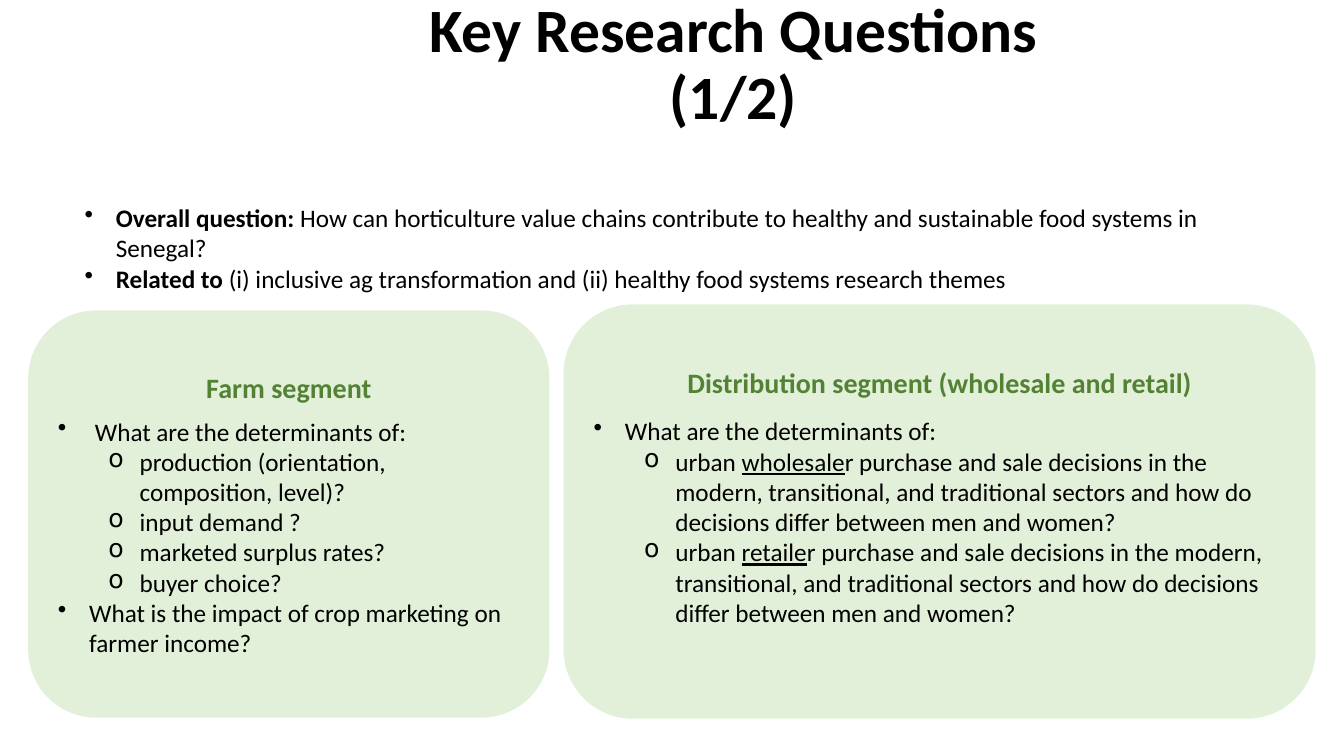
import pptx
import pptx.util
import pptx.dml.color
import pptx.enum.shapes
import pptx.enum.text
import pptx.oxml.ns
import lxml.etree

Inches = pptx.util.Inches
Pt = pptx.util.Pt
ALIGN = pptx.enum.text.PP_ALIGN
ANCHOR = pptx.enum.text.MSO_ANCHOR

FONT = "Calibri"
BLACK = "000000"
DARK_GREEN = "548235"
PALE_GREEN = "E2F0D9"
BULLETS = ("•", "o")

DECISIONS = (
    "r purchase and sale decisions in the modern, transitional, and traditional "
    "sectors and how do decisions differ between men and women?"
)

# Each item is a level and its runs; a run is its text and an optional emphasis.
OVERVIEW = [
    (0, [("Overall question: ", "bold"),
         ("How can horticulture value chains contribute to healthy and "
          "sustainable food systems in Senegal?", None)]),
    (0, [("Related to ", "bold"),
         ("(i) inclusive ag transformation and (ii) healthy food systems "
          "research themes", None)]),
]
FARM = [
    (0, [(" What are the determinants of:", None)]),
    (1, [("production (orientation, composition, level)?", None)]),
    (1, [("input demand ?", None)]),
    (1, [("marketed surplus rates?", None)]),
    (1, [("buyer choice?", None)]),
    (0, [("What is the impact of crop marketing on farmer income?", None)]),
]
DISTRIBUTION = [(0, [("What are the determinants of:", None)])] + [
    (1, [("urban ", None), (trader, "underline"), (DECISIONS, None)])
    for trader in ("wholesale", "retaile")
]


def color(hex_string):
    return pptx.dml.color.RGBColor.from_string(hex_string)


def style(paragraph, size, hex_color, alignment, bold=None):
    paragraph.alignment = alignment
    paragraph.font.name = FONT
    paragraph.font.size = Pt(size)
    paragraph.font.color.rgb = color(hex_color)
    paragraph.font.bold = bold


def set_bullet(paragraph, level):
    """Give the paragraph the hanging indent and bullet of its level."""
    paragraph.level = level
    properties = paragraph._p.get_or_add_pPr()
    properties.set("marL", str(Inches(0.31 + 0.5 * level)))
    properties.set("indent", str(Inches(-0.31)))
    bullet = lxml.etree.Element(pptx.oxml.ns.qn("a:buChar"), char=BULLETS[level])
    # Bullets come before the default run properties.
    properties.find(pptx.oxml.ns.qn("a:defRPr")).addprevious(bullet)


def add_bullets(text_frame, items):
    for level, runs in items:
        first_is_free = not text_frame.paragraphs[0].runs
        paragraph = text_frame.paragraphs[0] if first_is_free else text_frame.add_paragraph()
        style(paragraph, 18, BLACK, ALIGN.LEFT)
        set_bullet(paragraph, level)
        for text, emphasis in runs:
            run = paragraph.add_run()
            run.text = text
            if emphasis == "bold":
                run.font.bold = True
            elif emphasis == "underline":
                run.font.underline = True


def add_text_box(slide, left, top, width, height):
    box = slide.shapes.add_textbox(
        Inches(left), Inches(top), Inches(width), Inches(height))
    box.text_frame.word_wrap = True
    return box.text_frame


def add_title(slide, text):
    text_frame = add_text_box(slide, 3.54, 0.23, 7.47, 0.85)
    text_frame.vertical_anchor = ANCHOR.MIDDLE
    paragraph = text_frame.paragraphs[0]
    paragraph.text = text
    paragraph.line_spacing = 0.9
    style(paragraph, 44, BLACK, ALIGN.CENTER, bold=True)


def add_segment(slide, place, heading, heading_gap, items, bottom_margin=0.05):
    """Add a rounded panel with a green heading above its questions."""
    panel = slide.shapes.add_shape(
        pptx.enum.shapes.MSO_SHAPE.ROUNDED_RECTANGLE, *map(Inches, place))
    panel.shadow.inherit = False
    panel.fill.solid()
    panel.fill.fore_color.rgb = color(PALE_GREEN)
    panel.line.fill.background()
    text_frame = panel.text_frame
    text_frame.word_wrap = True
    text_frame.vertical_anchor = ANCHOR.MIDDLE
    text_frame.margin_bottom = Inches(bottom_margin)
    paragraph = text_frame.paragraphs[0]
    paragraph.text = heading
    paragraph.space_after = Pt(heading_gap)
    style(paragraph, 20, DARK_GREEN, ALIGN.CENTER, bold=True)
    add_bullets(text_frame, items)


def main():
    presentation = pptx.Presentation()
    presentation.slide_width = Inches(13.33)
    presentation.slide_height = Inches(7.5)
    slide = presentation.slides.add_slide(presentation.slide_layouts[6])

    add_title(slide, "Key Research Questions (1/2)")
    add_segment(slide, (0.28, 3.08, 5.17, 4.04), "Farm segment", 8.5, FARM)
    add_segment(slide, (5.59, 3.02, 7.46, 4.11),
                "Distribution segment (wholesale and retail)", 12, DISTRIBUTION,
                bottom_margin=0.35)
    add_bullets(add_text_box(slide, 0.74, 1.96, 11.82, 1.01), OVERVIEW)

    presentation.save("out.pptx")


if __name__ == "__main__":
    main()
